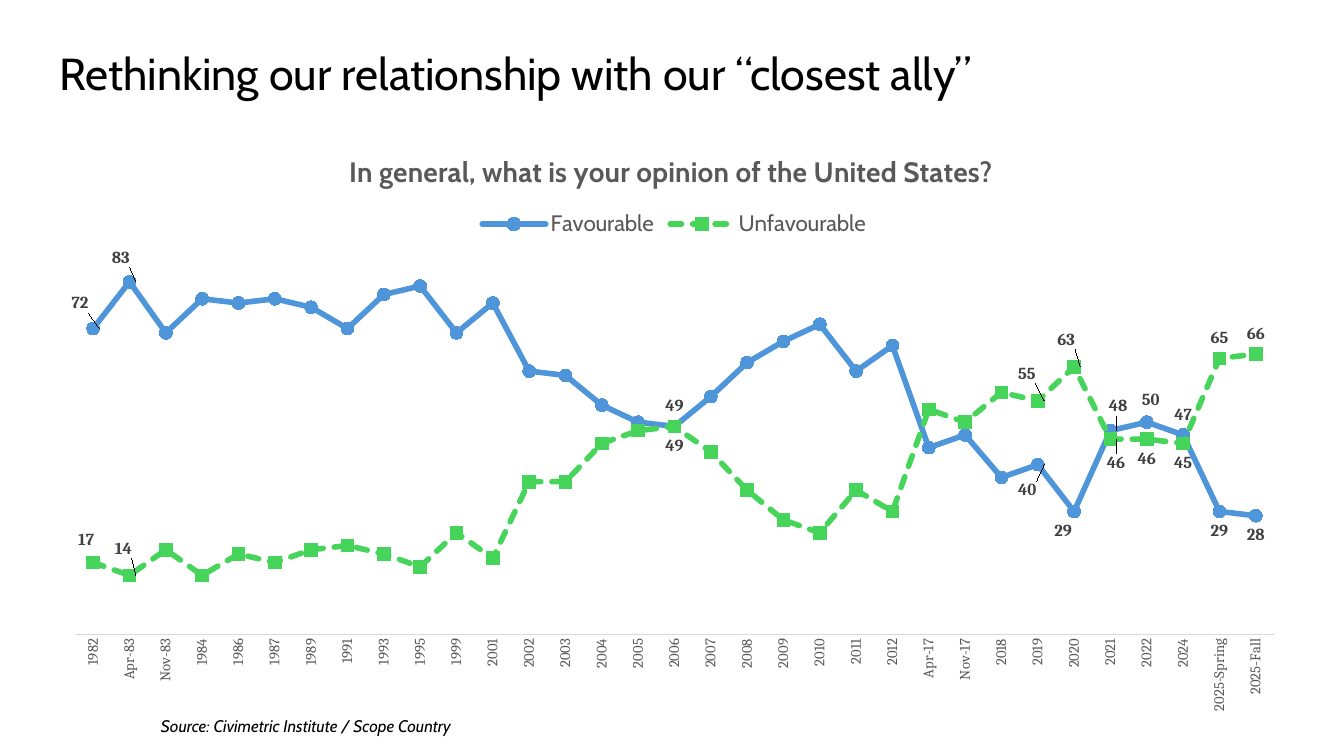
from dataclasses import dataclass

from lxml import etree
from pptx import Presentation
from pptx.chart.data import CategoryChartData
from pptx.dml.color import RGBColor
from pptx.enum.chart import (XL_CHART_TYPE, XL_LABEL_POSITION, XL_LEGEND_POSITION,
                             XL_MARKER_STYLE, XL_TICK_LABEL_POSITION, XL_TICK_MARK)
from pptx.enum.dml import MSO_LINE
from pptx.enum.text import MSO_ANCHOR, PP_ALIGN
from pptx.oxml.ns import qn
from pptx.util import Pt

LINE_MARKERS = XL_CHART_TYPE.LINE_MARKERS
ABOVE, BELOW, RIGHT = XL_LABEL_POSITION.ABOVE, XL_LABEL_POSITION.BELOW, XL_LABEL_POSITION.RIGHT
CIRCLE, SQUARE = XL_MARKER_STYLE.CIRCLE, XL_MARKER_STYLE.SQUARE
SOLID, DASHED = MSO_LINE.SOLID, MSO_LINE.SQUARE_DOT
NO_TICK = XL_TICK_MARK.NONE
NEXT_TO_AXIS = XL_TICK_LABEL_POSITION.NEXT_TO_AXIS
LEGEND_TOP = XL_LEGEND_POSITION.TOP
MIDDLE, LEFT = MSO_ANCHOR.MIDDLE, PP_ALIGN.LEFT
PX = 914400 / 100.8


@dataclass(frozen=True)
class Theme:
    heading: str = "Cabin"
    figures: str = "Cambria"
    ink: str = "000000"
    muted: str = "595959"
    label: str = "404040"
    axis: str = "D9D9D9"
    favourable: str = "4E95D9"
    unfavourable: str = "47D45A"
    title_size: float = 32
    question_size: float = 20
    legend_size: float = 16
    note_size: float = 12
    label_size: float = 12
    axis_size: float = 10.5
    chart_size: float = 10


THEME = Theme()
SURVEYS = ("1982 Apr-83 Nov-83 1984 1986 1987 1989 1991 1993 1995 1999 2001 2002 2003 2004 "
           "2005 2006 2007 2008 2009 2010 2011 2012 Apr-17 Nov-17 2018 2019 2020 2021 2022 "
           "2024 2025-Spring 2025-Fall").split()
# Labels: survey -> side of the point, shift right and shift down in px
OPINIONS = [
    dict(name="Favourable", colour=THEME.favourable, marker=CIRCLE, dash=SOLID,
         shares=[72, 83, 71, 79, 78, 79, 77, 72, 80, 82, 71, 78, 62, 61, 54, 50, 49, 56, 64,
                 69, 73, 62, 68, 44, 47, 37, 40, 29, 48, 50, 47, 29, 28],
         labels={"1982": (RIGHT, -32, -25), "Apr-83": (RIGHT, -28, -24),
                 "2006": (ABOVE, 0, 0), "2019": (RIGHT, -30, 26), "2020": (BELOW, -11, 0),
                 "2021": (RIGHT, -12, -24), "2022": (ABOVE, 4, -2), "2024": (ABOVE, 0, 0),
                 "2025-Spring": (BELOW, 0, 0), "2025-Fall": (BELOW, 0, 0)}),
    dict(name="Unfavourable", colour=THEME.unfavourable, marker=SQUARE, dash=DASHED,
         shares=[17, 14, 20, 14, 19, 17, 20, 21, 19, 16, 24, 18, 36, 36, 45, 48, 49, 43, 34,
                 27, 24, 34, 29, 53, 50, 57, 55, 63, 46, 46, 45, 65, 66],
         labels={"1982": (ABOVE, -7, -3), "Apr-83": (RIGHT, -25, -26),
                 "2006": (BELOW, 0, 0), "2019": (RIGHT, -30, -27), "2020": (RIGHT, -27, -27),
                 "2021": (RIGHT, -14, 24), "2022": (BELOW, 0, 0), "2024": (BELOW, 0, 0),
                 "2025-Spring": (ABOVE, 0, 0), "2025-Fall": (ABOVE, 0, 0)}),
]


def emu(*lengths):
    return [round(length * PX) for length in lengths]


def set_font(font, size, colour, face, bold=False, italic=False):
    font.size, font.name, font.bold, font.italic = Pt(size), face, bold, italic
    font.color.rgb = RGBColor.from_string(colour)


def manual_layout(**settings):
    layout = etree.Element(qn("c:layout"))
    manual = etree.SubElement(layout, qn("c:manualLayout"))
    for tag, value in settings.items():
        etree.SubElement(manual, qn("c:" + tag)).set("val", str(value))
    return layout


def place_part(part, box, left, top, width=None, height=None, **target):
    """Fix a chart part at px measured from the chart's corner."""
    settings = dict(target, xMode="edge", yMode="edge",
                    x=round(left / box[2], 4), y=round(top / box[3], 4))
    if width:
        settings.update(w=round(width / box[2], 4), h=round(height / box[3], 4))
    for old in part.findall(qn("c:layout")):
        part.remove(old)
    earlier = [child for child in part if child.tag in (qn("c:tx"), qn("c:legendPos"))]
    part.insert(len(earlier), manual_layout(**settings))


def add_title(slide, box, words):
    title = slide.shapes.title
    title.left, title.top, title.width, title.height = emu(*box)
    title.text_frame.vertical_anchor = MIDDLE
    line = title.text_frame.paragraphs[0]
    line.alignment, line.line_spacing = LEFT, 0.9
    run = line.add_run()
    run.text = words
    set_font(run.font, THEME.title_size, THEME.ink, THEME.heading)


def add_source(slide, box, words):
    note = slide.shapes.add_textbox(*emu(*box)).text_frame
    note.word_wrap = True
    run = note.paragraphs[0].add_run()
    run.text = words
    set_font(run.font, THEME.note_size, THEME.ink, THEME.heading, italic=True)


def style_opinion(series, opinion, box):
    colour = RGBColor.from_string(opinion["colour"])
    series.smooth = False
    line = series.format.line
    line.color.rgb, line.width, line.dash_style = colour, Pt(4), opinion["dash"]
    series._element.spPr.find(qn("a:ln")).set("cap", "rnd")
    marker = series.marker
    marker.style, marker.size = opinion["marker"], 9
    marker.format.fill.solid()
    marker.format.fill.fore_color.rgb = colour
    marker.format.line.color.rgb = colour

    series.data_labels.show_value = False
    for survey, (side, right, down) in opinion["labels"].items():
        label = series.points[SURVEYS.index(survey)].data_label
        set_font(label.font, THEME.label_size, THEME.label, THEME.figures, bold=True)
        label.position = side
        if right or down:
            label._get_or_add_dLbl().insert(1, manual_layout(
                x=round(right / box[2], 4), y=round(down / box[3], 4)))


def style_axes(chart):
    shares = chart.value_axis
    shares.minimum_scale, shares.maximum_scale = 0, 90
    shares.has_major_gridlines = shares.visible = False
    surveys = chart.category_axis
    surveys.major_tick_mark = surveys.minor_tick_mark = NO_TICK
    surveys.tick_label_position = NEXT_TO_AXIS
    surveys.format.line.color.rgb = RGBColor.from_string(THEME.axis)
    surveys.format.line.width = Pt(0.75)
    set_font(surveys.tick_labels.font, THEME.axis_size, THEME.muted, THEME.figures)
    turn = surveys._element.find(qn("c:txPr")).find(qn("a:bodyPr"))
    turn.set("rot", "-5400000")
    turn.set("vert", "horz")


def add_opinion_chart(slide, box, question):
    trend = CategoryChartData(number_format="0")
    trend.categories = SURVEYS
    for opinion in OPINIONS:
        trend.add_series(opinion["name"], opinion["shares"])
    chart = slide.shapes.add_chart(LINE_MARKERS, *emu(*box), trend).chart
    set_font(chart.font, THEME.chart_size, THEME.ink, THEME.heading)

    chart.has_title = True
    heading = chart.chart_title.text_frame.paragraphs[0].add_run()
    heading.text = question
    set_font(heading.font, THEME.question_size, THEME.muted, THEME.heading, bold=True)
    place_part(chart.chart_title._element, box, 295, 17)

    chart.has_legend = True
    legend = chart.legend
    legend.position, legend.include_in_layout = LEGEND_TOP, False
    set_font(legend.font, THEME.legend_size, THEME.muted, THEME.heading)
    place_part(legend._element, box, 424, 77, 402, 34)

    style_axes(chart)
    plot = chart.plots[0]
    plot.vary_by_categories = False
    for series, opinion in zip(plot.series, OPINIONS):
        style_opinion(series, opinion, box)
    place_part(chart._chartSpace.chart.plotArea, box, 26, 122, 1199, 383, layoutTarget="inner")


def main():
    deck = Presentation()
    deck.slide_width, deck.slide_height = emu(1344, 756)
    slide = deck.slides.add_slide(deck.slide_layouts[5])
    add_title(slide, (49, 16, 1159, 120), "Rethinking our relationship with our “closest ally”")
    add_opinion_chart(slide, (49, 130, 1249, 597),
                      "In general, what is your opinion of the United States?")
    add_source(slide, (151, 711, 486, 30), "Source: Civimetric Institute / Scope Country")
    deck.save("out.pptx")


if __name__ == "__main__":
    main()
